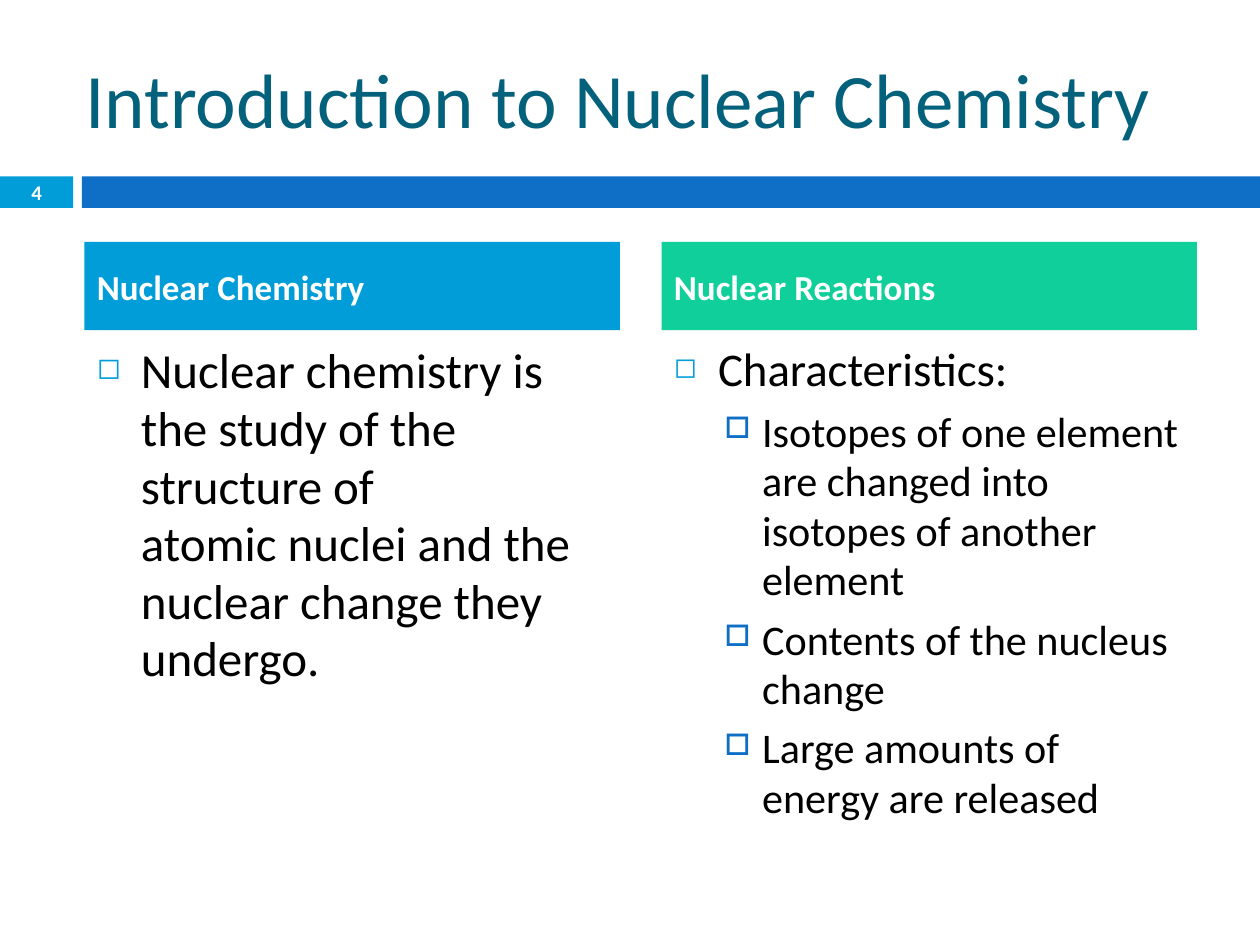
from pptx import Presentation
from pptx.dml.color import RGBColor
from pptx.enum import shapes, text
from pptx.oxml import parse_xml
from pptx.oxml.ns import nsdecls
from pptx.util import Inches, Pt

# Content
TITLE = "Introduction to Nuclear Chemistry"
SLIDE_NUMBER = "4"
CYAN, BLUE, GREEN, TEAL = "009DD9", "0F6FC6", "10CF9B", "04617B"
COLUMNS = [  # heading, heading fill, [(level, text, size)]
    ("Nuclear Chemistry", CYAN, [
        (0, "Nuclear chemistry is the study of the structure of\v"
            "atomic nuclei and the nuclear change they undergo.", 28),
    ]),
    ("Nuclear Reactions", GREEN, [
        (0, "Characteristics:", 26.8),
        (1, "Isotopes of one element are changed into isotopes of another element", 24.1),
        (1, "Contents of the nucleus change", 24.1),
        (1, "Large amounts of energy are released", 24.1),
    ]),
]
LEVELS = [  # bullet style of each outline level
    dict(mark="◻", color=CYAN, percent=60, margin=0.35, hanging=0.35, before=7),
    dict(mark="□", color=BLUE, percent=70, margin=0.7, hanging=0.3, before=5.5),
]

# Layout in inches
COLUMN_LEFT, COLUMN_WIDTH, COLUMN_STEP = 0.67, 4.25, 4.58
HEADING_TOP, HEADING_HEIGHT = 1.92, 0.7
BODY_TOP, BODY_HEIGHT = 2.67, 3.92
BAR_TOP, BAR_HEIGHT = 1.4, 0.25


def rgb(value):
    return RGBColor.from_string(value)


def add_bar(slide, box, color):
    shape = slide.shapes.add_shape(shapes.MSO_SHAPE.RECTANGLE, *map(Inches, box))
    shape.shadow.inherit = False
    shape.fill.solid()
    shape.fill.fore_color.rgb = rgb(color)
    shape.line.fill.background()
    return shape


def add_box(slide, box, anchor=text.MSO_ANCHOR.MIDDLE):
    shape = slide.shapes.add_textbox(*map(Inches, box))
    shape.text_frame.word_wrap = True
    shape.text_frame.vertical_anchor = anchor
    return shape


def write(paragraph, words, size, color="000000", bold=False,
          align=text.PP_ALIGN.LEFT, before=0, spacing=None):
    paragraph.text = words
    paragraph.alignment = align
    paragraph.space_before = Pt(before)
    if spacing:
        paragraph.line_spacing = spacing
    font = paragraph.font
    for item in [font] + [run.font for run in paragraph.runs]:
        item.name, item.size, item.bold = "Calibri", Pt(size), bold
        item.color.rgb = rgb(color)


def add_bullet(paragraph, mark, color, percent, margin, hanging):
    properties = paragraph._p.get_or_add_pPr()
    properties.set("marL", str(Inches(margin)))
    properties.set("indent", str(-Inches(hanging)))
    bullet = [
        f'<a:buClr {nsdecls("a")}><a:srgbClr val="{color}"/></a:buClr>',
        f'<a:buSzPct {nsdecls("a")} val="{percent * 1000}"/>',
        f'<a:buChar {nsdecls("a")} char="{mark}"/>',
    ]
    # Bullet elements come before the default run properties
    defaults = properties.find("{http://schemas.openxmlformats.org/drawingml/2006/main}defRPr")
    for xml in bullet:
        defaults.addprevious(parse_xml(xml))


def add_column(slide, left, heading, color, items):
    header = add_bar(slide, (left, HEADING_TOP, COLUMN_WIDTH, HEADING_HEIGHT), color)
    header.text_frame.word_wrap = True
    header.text_frame.vertical_anchor = text.MSO_ANCHOR.MIDDLE
    write(header.text_frame.paragraphs[0], heading, 20, color="FFFFFF", bold=True, before=7)

    body = add_box(slide, (left, BODY_TOP, COLUMN_WIDTH, BODY_HEIGHT), text.MSO_ANCHOR.TOP)
    frame = body.text_frame
    for index, (level, words, size) in enumerate(items):
        paragraph = frame.add_paragraph() if index else frame.paragraphs[0]
        style = dict(LEVELS[level])
        write(paragraph, words, size, before=style.pop("before"), spacing=0.98)
        paragraph.level = level
        add_bullet(paragraph, **style)


def main():
    presentation = Presentation()
    presentation.slide_width, presentation.slide_height = Inches(10), Inches(7.5)
    slide = presentation.slides.add_slide(presentation.slide_layouts[6])

    # Divider bars, title and slide number
    add_bar(slide, (0, BAR_TOP, 0.58, BAR_HEIGHT), CYAN)
    add_bar(slide, (0.65, BAR_TOP, 9.35, BAR_HEIGHT), BLUE)
    title = add_box(slide, (0.58, 0.3, 8.92, 0.95))
    write(title.text_frame.paragraphs[0], TITLE, 44, color=TEAL)
    number = add_box(slide, (0, 1.39, 0.58, 0.27))
    write(number.text_frame.paragraphs[0], SLIDE_NUMBER, 11.9, color="FFFFFF",
          bold=True, align=text.PP_ALIGN.CENTER)

    # Two columns
    for index, column in enumerate(COLUMNS):
        add_column(slide, COLUMN_LEFT + index * COLUMN_STEP, *column)

    presentation.save("out.pptx")


if __name__ == "__main__":
    main()
